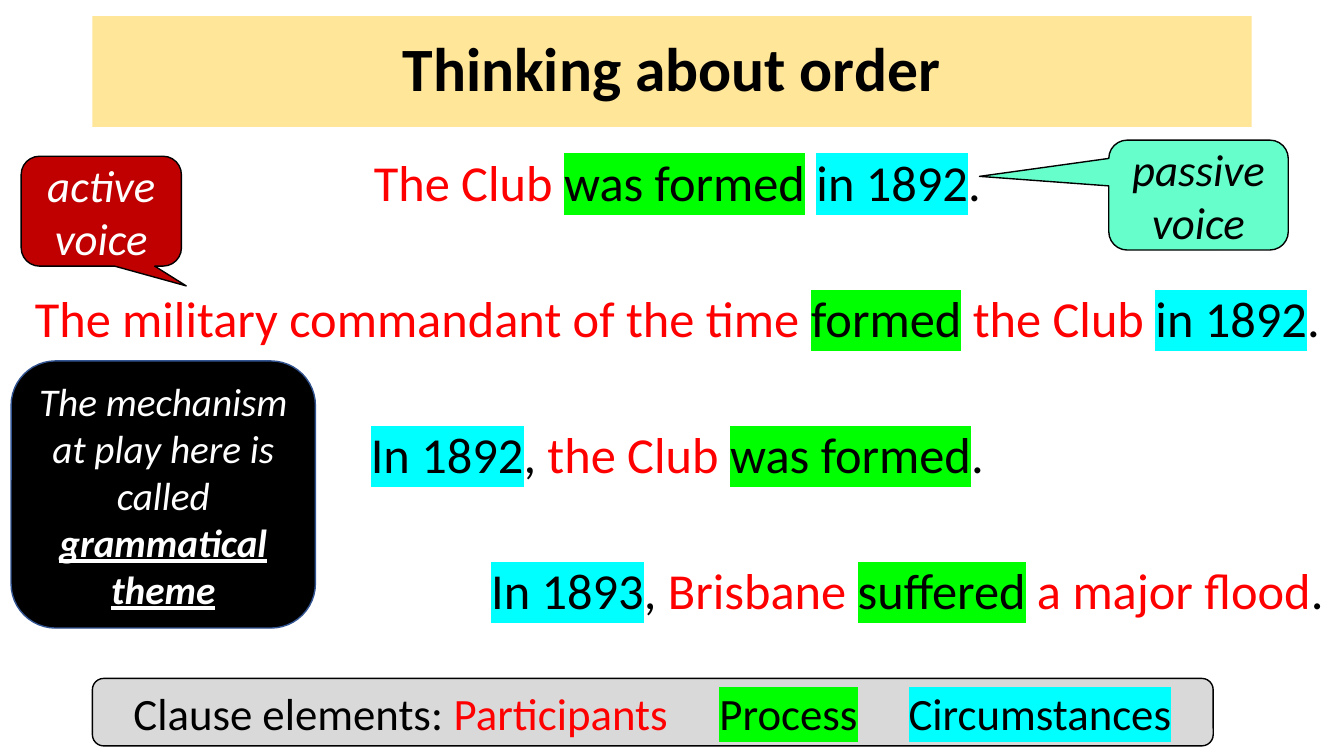
from lxml import etree
from pptx import Presentation
from pptx.dml.color import RGBColor
from pptx.enum.shapes import MSO_SHAPE
from pptx.enum.text import MSO_ANCHOR, PP_ALIGN
from pptx.oxml.ns import qn
from pptx.util import Pt

BLACK, WHITE, RED = "000000", "FFFFFF", "FF0000"
PLAIN = {"color": BLACK}
PARTICIPANT = {"color": RED}
PROCESS = {"color": BLACK, "highlight": "00FF00"}
CIRCUMSTANCE = {"color": BLACK, "highlight": "00FFFF"}

SENTENCES = [
    (PP_ALIGN.CENTER, [
        ("The Club ", PARTICIPANT), ("was formed", PROCESS), (" ", PLAIN),
        ("in 1892", CIRCUMSTANCE), (".", PLAIN)]),
    (PP_ALIGN.CENTER, [
        ("The military commandant of the time ", PARTICIPANT),
        ("formed", PROCESS), (" ", PLAIN), ("the Club ", PARTICIPANT),
        ("in 1892", CIRCUMSTANCE), (".", PLAIN)]),
    (PP_ALIGN.CENTER, [
        ("In 1892", CIRCUMSTANCE), (", ", PLAIN), ("the Club ", PARTICIPANT),
        ("was formed", PROCESS), (".", PLAIN)]),
    (PP_ALIGN.RIGHT, [
        ("In 1893", CIRCUMSTANCE), (", ", PLAIN), ("Brisbane ", PARTICIPANT),
        ("suffered", PROCESS), (" ", PLAIN), ("a major flood", PARTICIPANT),
        (".", PLAIN)]),
]


def rgb(value):
    return RGBColor.from_string(value)


def set_fill(sp, color):
    sp.fill.solid()
    sp.fill.fore_color.rgb = rgb(color)


def add_run(p, text, size, color=BLACK, highlight=None, **formats):
    r = p.add_run()
    r.text = text
    for name, value in {"name": "Calibri", "size": Pt(size), **formats}.items():
        setattr(r.font, name, value)
    r.font.color.rgb = rgb(color)
    if highlight:
        mark = etree.Element(qn("a:highlight"))
        etree.SubElement(mark, qn("a:srgbClr"), val=highlight)
        r.font._element.find(qn("a:solidFill")).addnext(mark)


def add_runs(p, runs, size, align=PP_ALIGN.CENTER):
    p.alignment = align
    for text, formats in runs:
        add_run(p, text, size, **formats)


def add_tabs(p, *stops):
    tabs = etree.SubElement(p._p.get_or_add_pPr(), qn("a:tabLst"))
    for stop in stops:
        etree.SubElement(tabs, qn("a:tab"), pos=str(Pt(stop)), algn="l")


def set_title(s, text):
    sp = s.shapes.title
    sp.left, sp.top, sp.width, sp.height = Pt(66), Pt(11.5), Pt(828), Pt(79.2)
    set_fill(sp, "FFE699")
    sp.text_frame.vertical_anchor = MSO_ANCHOR.MIDDLE
    p = sp.text_frame.paragraphs[0]
    p.line_spacing = 0.9
    add_runs(p, [(text, {"bold": True})], 44)


def add_sentences(s, left, top, width, height):
    tf = s.shapes.add_textbox(Pt(left), Pt(top), Pt(width), Pt(height)).text_frame
    tf.word_wrap = True
    for i, (align, runs) in enumerate(SENTENCES):
        p = tf.add_paragraph() if i else tf.paragraphs[0]
        p.space_after = Pt(54)
        add_runs(p, runs, 36, align)


def add_box(s, kind, box, fill, line=BLACK, adjustments=()):
    """Add an outlined shape and return its text frame."""
    sp = s.shapes.add_shape(kind, *map(Pt, box))
    sp.shadow.inherit = False
    set_fill(sp, fill)
    sp.line.color.rgb = rgb(line)
    sp.line.width = Pt(1)
    for i, value in enumerate(adjustments):
        sp.adjustments[i] = value
    tf = sp.text_frame
    tf.word_wrap = True
    tf.vertical_anchor = MSO_ANCHOR.MIDDLE
    return tf


def add_callout(s, text, box, fill, color, tip):
    tf = add_box(s, MSO_SHAPE.ROUNDED_RECTANGULAR_CALLOUT, box, fill,
                 adjustments=(*tip, 0.167))
    add_runs(tf.paragraphs[0], [(text, {"color": color, "italic": True})], 32)


def add_theme_note(s):
    tf = add_box(s, MSO_SHAPE.ROUNDED_RECTANGLE, (7.9, 257.8, 217.4, 190.8),
                 BLACK, line="325491")
    note = {"color": WHITE, "italic": True}
    add_runs(tf.paragraphs[0], [
        ("The mechanism at play here is called ", note),
        ("grammatical theme", {**note, "bold": True, "underline": True})], 28)


def add_legend(s):
    tf = add_box(s, MSO_SHAPE.ROUNDED_RECTANGLE, (66, 484.6, 800.6, 48.2), "D9D9D9")
    tf.margin_left = Pt(27)
    p = tf.paragraphs[0]
    add_tabs(p, 418.6, 553.6)
    add_runs(p, [
        ("Clause elements: ", PLAIN), ("Participants", PARTICIPANT), ("\t", PLAIN),
        ("Process", PROCESS), ("\t", PLAIN), ("Circumstances", CIRCUMSTANCE),
    ], 32, PP_ALIGN.LEFT)


def main():
    prs = Presentation()
    prs.slide_width, prs.slide_height = Pt(960), Pt(540)
    s = prs.slides.add_slide(prs.slide_layouts[5])
    set_title(s, "Thinking about order")
    add_sentences(s, 15.1, 104.4, 937.4, 417.6)
    add_callout(s, "active voice", (15.1, 111.6, 114.5, 78.5), "C00000", WHITE,
                (0.53, 0.68))
    add_callout(s, "passive voice", (792, 100.1, 128.2, 78.5), "66FFCC", BLACK,
                (-1.22, -0.17))
    add_theme_note(s)
    add_legend(s)
    prs.save("out.pptx")


if __name__ == "__main__":
    main()
